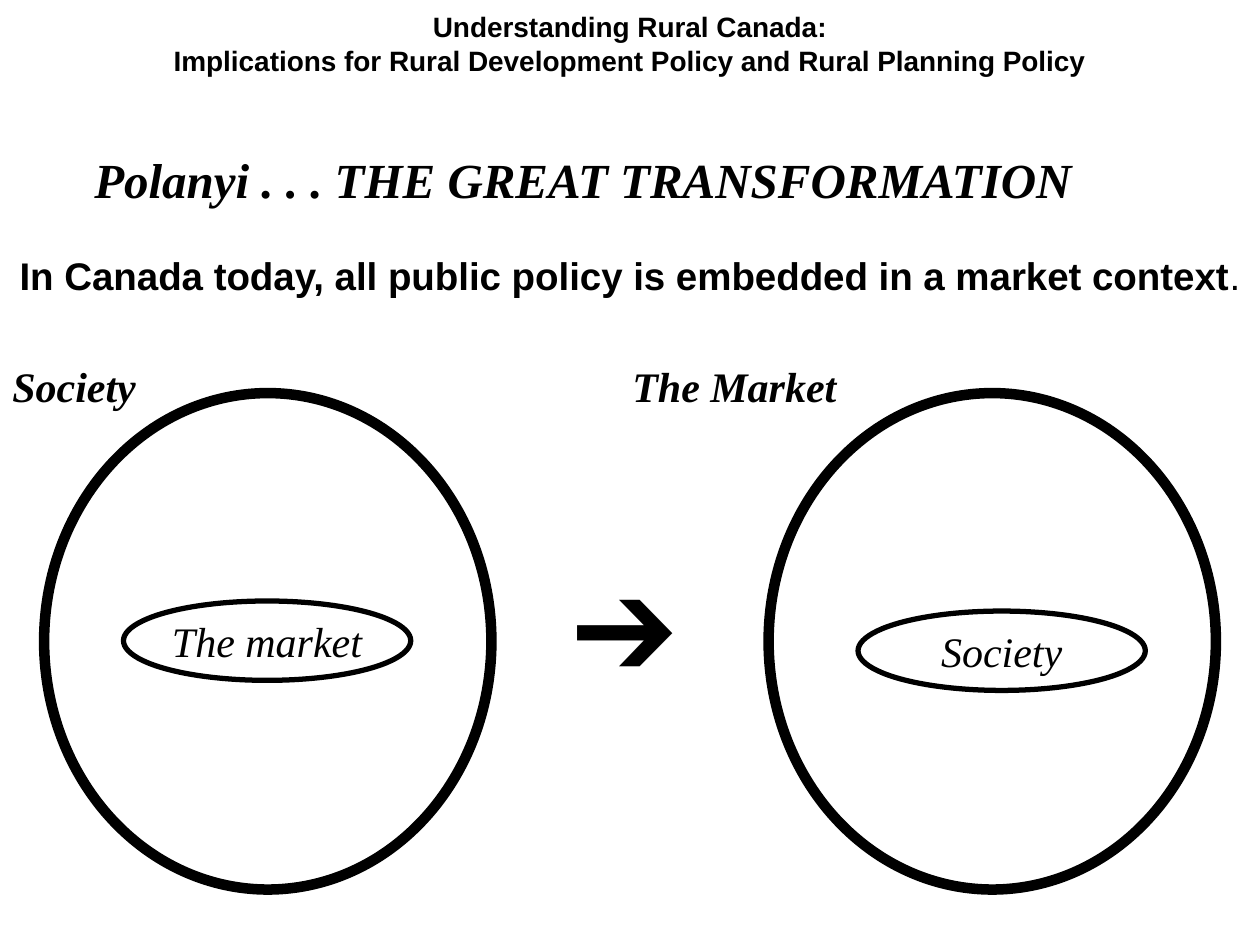
import pptx
import pptx.util
import pptx.dml.color
import pptx.enum.shapes
import pptx.enum.text
from pptx.util import Inches

BLACK = "000000"
SANS = "Arial"
SERIF = "Times New Roman"
LEFT = pptx.enum.text.PP_ALIGN.LEFT
CENTER = pptx.enum.text.PP_ALIGN.CENTER


def color(hex_string):
    return pptx.dml.color.RGBColor.from_string(hex_string)


def write(shape, lines, font_name, size, alignment):
    """Each line is a list of (text, bold, italic) runs."""
    frame = shape.text_frame
    for index, runs in enumerate(lines):
        paragraph = frame.add_paragraph() if index else frame.paragraphs[0]
        paragraph.alignment = alignment
        for text, bold, italic in runs:
            run = paragraph.add_run()
            run.text = text
            run.font.name = font_name
            run.font.size = pptx.util.Pt(size)
            run.font.bold = bold
            run.font.italic = italic
            run.font.color.rgb = color(BLACK)


presentation = pptx.Presentation()
presentation.slide_width = Inches(10)
presentation.slide_height = Inches(7.5)
slide = presentation.slides.add_slide(presentation.slide_layouts[6])

# Outer circles, then the small ellipses embedded in them
ellipses = [
    (0.35, 3.12, 3.55, 3.94, 6, None),
    (6.1, 3.12, 3.55, 3.94, 6, None),
    (0.98, 4.77, 2.28, 0.63, 3, "The market"),
    (6.81, 4.85, 2.28, 0.63, 3, "Society"),
]
for left, top, width, height, line_width, label in ellipses:
    ellipse = slide.shapes.add_shape(
        pptx.enum.shapes.MSO_SHAPE.OVAL,
        Inches(left), Inches(top), Inches(width), Inches(height))
    ellipse.shadow.inherit = False
    ellipse.fill.background()
    ellipse.line.color.rgb = color(BLACK)
    ellipse.line.width = pptx.util.Pt(line_width)
    if label:
        ellipse.text_frame.word_wrap = False
        ellipse.text_frame.vertical_anchor = pptx.enum.text.MSO_ANCHOR.MIDDLE
        write(ellipse, [[(label, False, True)]], SERIF, 24, CENTER)

# Headings, circle captions and the arrow between the circles
texts = [
    (0, 0.03, 10, 0.64, SANS, 16, CENTER, [
        [("Understanding Rural Canada:", True, False)],
        [("Implications for Rural Development Policy and Rural Planning Policy",
          True, False)]]),
    (0.65, 1.14, 8.43, 0.57, SERIF, 28, LEFT, [
        [("Polanyi . . . THE GREAT TRANSFORMATION", True, True)]]),
    (0, 1.95, 10, 0.47, SANS, 22, CENTER, [
        [("In Canada today, all public policy is embedded in a market context",
          True, False), (".", False, False)]]),
    (0, 2.81, 1.5, 0.5, SERIF, 24, LEFT, [[("Society", True, True)]]),
    (4.92, 2.81, 2.13, 0.5, SERIF, 24, LEFT, [[("The Market", True, True)]]),
    (4.45, 4.38, 1.34, 1.2, SERIF, 66, LEFT, [[("➔", False, False)]]),
]
for left, top, width, height, font_name, size, alignment, lines in texts:
    text_box = slide.shapes.add_textbox(
        Inches(left), Inches(top), Inches(width), Inches(height))
    text_box.text_frame.word_wrap = True
    text_box.text_frame.auto_size = pptx.enum.text.MSO_AUTO_SIZE.SHAPE_TO_FIT_TEXT
    write(text_box, lines, font_name, size, alignment)

presentation.save("out.pptx")
